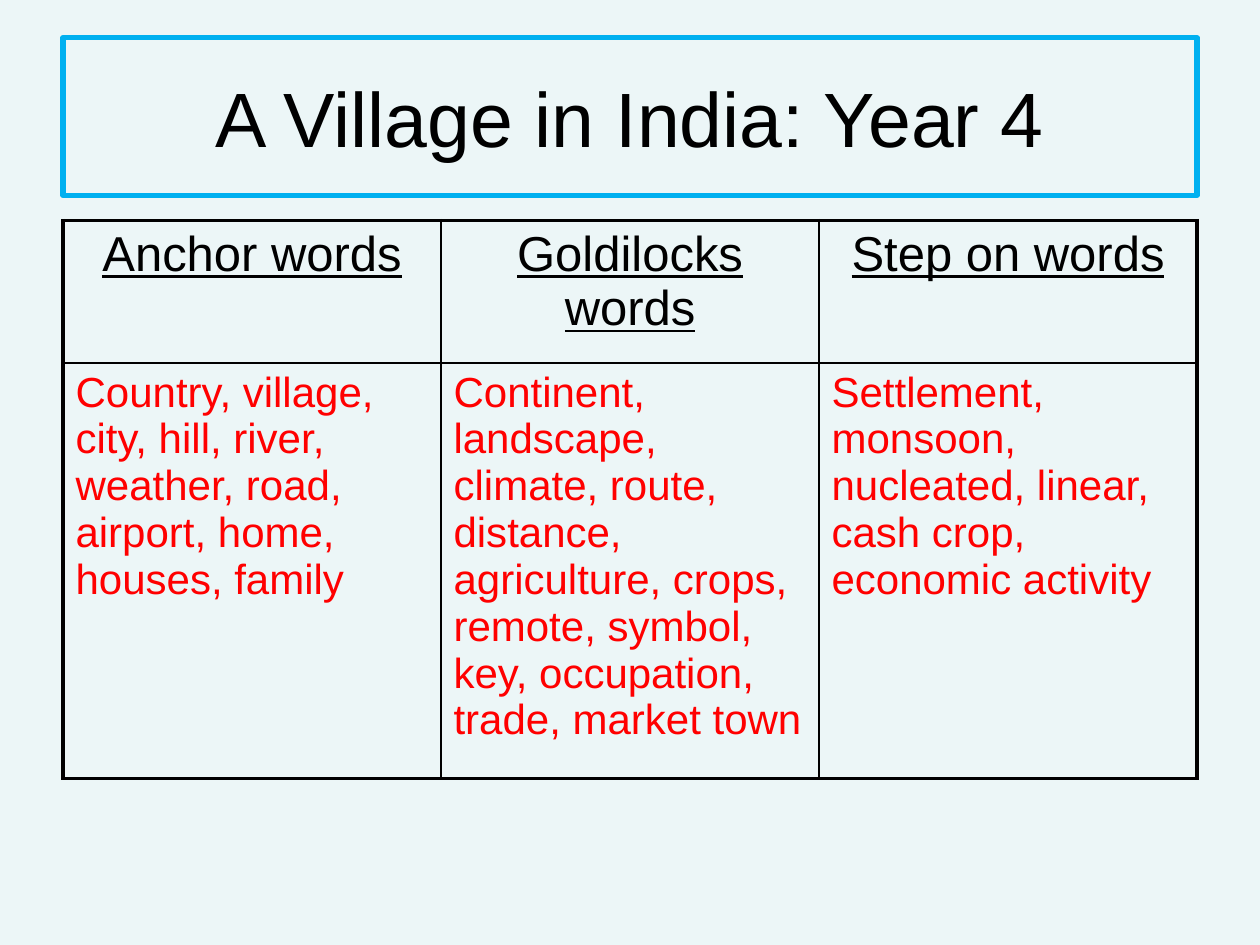
from lxml import etree
from pptx import Presentation
from pptx import util as u
from pptx.dml.color import RGBColor
from pptx.enum import text
from pptx.oxml import ns

PX = 9144  # EMU per px, 100 px to the inch
FONT = "Arial"
COLORS = {"page": "ECF6F7", "frame": "00B0F0", "ink": "000000", "words": "FF0000"}
THICK, THIN = 2.25, 1

WORDS = {
    "Anchor words": "Country, village, city, hill, river, weather, road, "
                    "airport, home, houses, family",
    "Goldilocks words": "Continent, landscape, climate, route, distance, "
                        "agriculture, crops, remote, symbol, key, occupation, "
                        "trade, market town",
    "Step on words": "Settlement, monsoon, nucleated, linear, cash crop, "
                     "economic activity",
}


def color(name):
    return RGBColor.from_string(COLORS[name])


def format_text(frame, size, ink, align, underline=False):
    for para in frame.paragraphs:
        para.alignment = align
        for span in para.runs:
            span.font.name = FONT
            span.font.size = u.Pt(size)
            span.font.underline = underline
            span.font.color.rgb = color(ink)


def add_border(cell, side, points):
    """Draw one side (L, R, T or B) of a cell; call before filling the cell."""
    line = etree.SubElement(cell._tc.get_or_add_tcPr(), ns.qn(f"a:ln{side}"),
                            w=str(u.Pt(points)))
    fill = etree.SubElement(line, ns.qn("a:solidFill"))
    etree.SubElement(fill, ns.qn("a:srgbClr"), val=COLORS["ink"])


def place_title(page, left, top, width, height):
    title = page.shapes.title
    title.left, title.top = left * PX, top * PX
    title.width, title.height = width * PX, height * PX
    title.line.color.rgb = color("frame")
    title.line.width = u.Pt(3)
    frame = title.text_frame
    frame.text = "A Village in India: Year 4"
    frame.auto_size = text.MSO_AUTO_SIZE.NONE
    frame.vertical_anchor = text.MSO_ANCHOR.MIDDLE
    format_text(frame, 44, "ink", text.PP_ALIGN.CENTER)


def place_word_table(page, left, top, width, row_heights):
    rows = [list(WORDS), list(WORDS.values())]
    last_row, last_column = len(rows) - 1, len(WORDS) - 1
    table = page.shapes.add_table(len(rows), len(WORDS), left * PX, top * PX,
                                  width * PX, sum(row_heights) * PX).table
    table.first_row = table.horz_banding = False
    for r, (height, entries) in enumerate(zip(row_heights, rows)):
        table.rows[r].height = height * PX
        for c, entry in enumerate(entries):
            cell = table.cell(r, c)
            cell.text_frame.text = entry
            if r == 0:
                format_text(cell.text_frame, 28, "ink", text.PP_ALIGN.CENTER, True)
            else:
                format_text(cell.text_frame, 24, "words", text.PP_ALIGN.LEFT)
            outer = {"L": c == 0, "R": c == last_column,
                     "T": r == 0, "B": r == last_row}
            for side, is_outer in outer.items():
                add_border(cell, side, THICK if is_outer else THIN)
            cell.fill.background()


def main():
    deck = Presentation()
    deck.slide_width, deck.slide_height = 1000 * PX, 750 * PX
    page = deck.slides.add_slide(deck.slide_layouts.get_by_name("Title Only"))
    page.background.fill.solid()
    page.background.fill.fore_color.rgb = color("page")
    place_title(page, 50, 30, 900, 125)
    place_word_table(page, 50, 175, 900, [113, 330])
    deck.save("out.pptx")


if __name__ == "__main__":
    main()
